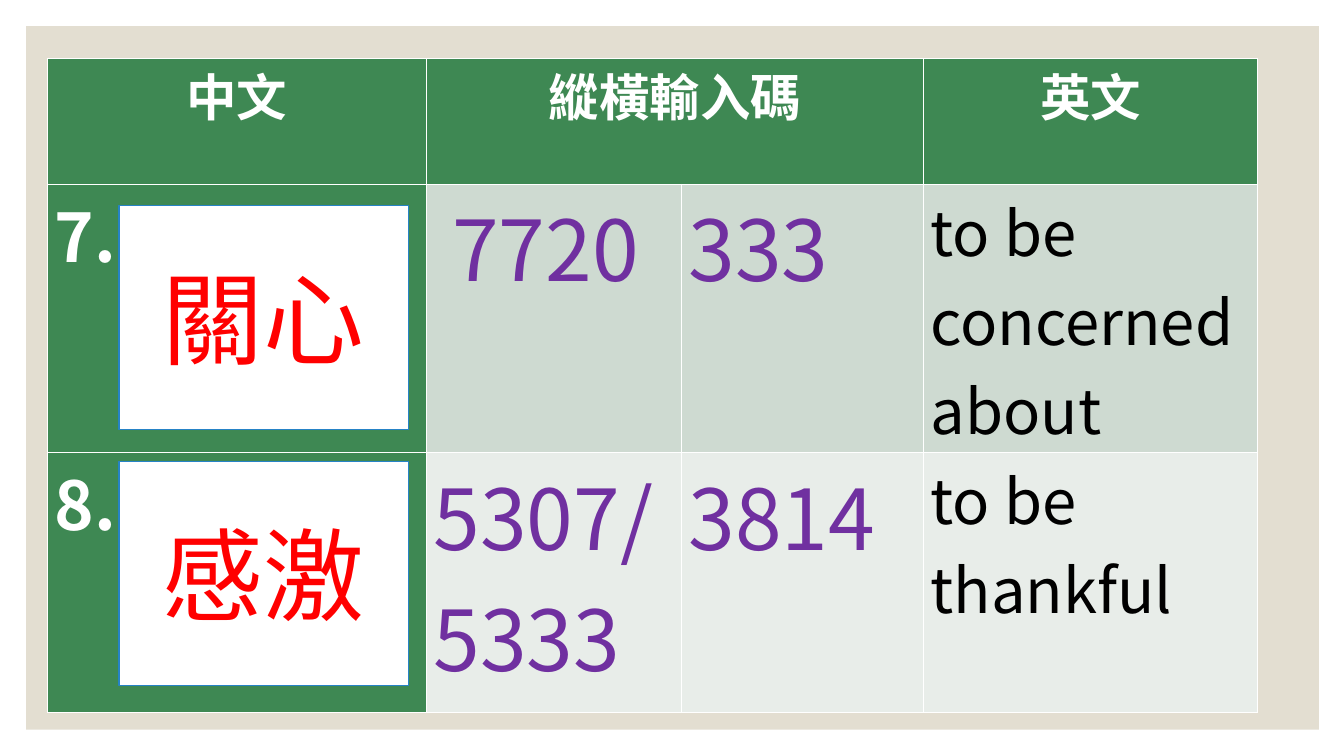
from lxml.etree import SubElement
from pptx import Presentation
from pptx.dml.color import RGBColor
from pptx.enum.shapes import MSO_SHAPE as SHAPE
from pptx.enum.text import MSO_ANCHOR as ANCHOR, PP_ALIGN as ALIGN
from pptx.oxml.ns import qn
from pptx.util import Pt

FONT = "Noto Sans CJK SC"
WHITE = RGBColor(0xFF, 0xFF, 0xFF)
BLACK = RGBColor(0, 0, 0)
RED = RGBColor(0xFF, 0, 0)
PURPLE = RGBColor(0x70, 0x30, 0xA0)
GREEN = RGBColor(0x3E, 0x88, 0x53)
SAGE = RGBColor(0xCE, 0xDA, 0xD1)
MIST = RGBColor(0xE8, 0xED, 0xE9)
BEIGE = RGBColor(0xE3, 0xDE, 0xD1)
BLUE = RGBColor(0x26, 0x83, 0xC6)

HEADERS = {0: "中文", 1: "縱橫輸入碼", 3: "英文"}
WORDS = [
    ("7.", " 7720", "333", "to be concerned about"),
    ("8.", "5307/5333", "3814", "to be thankful"),
]
ANSWERS = ["關心", "感激"]
BANDS = [SAGE, MIST]
COLUMN_STYLES = [(48, WHITE, True), (60, PURPLE, False),
                 (60, PURPLE, False), (44, BLACK, False)]

EMU_PER_PX = 9144
COL_WIDTHS = [376, 253, 240, 331]
ROW_HEIGHTS = [125, 258, 258]
TABLE_LEFT, TABLE_TOP = 47, 58
CARD_LEFT, CARD_TOP, CARD_WIDTH, CARD_HEIGHT, CARD_STEP = 118, 204, 287, 222, 254


def px(*lengths):
    return [n * EMU_PER_PX for n in lengths]


def add_text(tf, text, size, color, bold=False, align=ALIGN.LEFT):
    p = tf.paragraphs[0]
    p.alignment = align
    r = p.add_run()
    r.text = text
    r.font.size = Pt(size)
    r.font.bold = bold
    r.font.color.rgb = color
    r.font.name = FONT
    SubElement(r.font._element, qn("a:ea"), typeface=FONT)


def add_box(shapes, box, fill, line=None):
    sp = shapes.add_shape(SHAPE.RECTANGLE, *px(*box))
    sp.shadow.inherit = False
    sp.fill.solid()
    sp.fill.fore_color.rgb = fill
    if line is None:
        sp.line.fill.background()
    else:
        sp.line.color.rgb = line
        sp.line.width = Pt(1)
    return sp


def add_word_table(shapes):
    box = px(TABLE_LEFT, TABLE_TOP, sum(COL_WIDTHS), sum(ROW_HEIGHTS))
    table = shapes.add_table(len(ROW_HEIGHTS), len(COL_WIDTHS), *box).table
    table.first_col = True
    for col, width in zip(table.columns, px(*COL_WIDTHS)):
        col.width = width
    for row, height in zip(table.rows, px(*ROW_HEIGHTS)):
        row.height = height
    for i, row in enumerate(table.rows):
        for j, cell in enumerate(row.cells):
            cell.margin_left, cell.margin_right = px(7, 7)
            cell.margin_top = cell.margin_bottom = 0
            cell.fill.solid()
            cell.fill.fore_color.rgb = GREEN if i == 0 or j == 0 else BANDS[i - 1]
    table.cell(0, 1).merge(table.cell(0, 2))
    for j, text in HEADERS.items():
        add_text(table.cell(0, j).text_frame, text, 36, WHITE, True, ALIGN.CENTER)
    for i, word in enumerate(WORDS, 1):
        for j, (text, style) in enumerate(zip(word, COLUMN_STYLES)):
            add_text(table.cell(i, j).text_frame, text, *style)


def main():
    prs = Presentation()
    prs.slide_width, prs.slide_height = px(1333, 750)
    s = prs.slides.add_slide(prs.slide_layouts[6])
    add_box(s.shapes, (26, 26, 1282, 698), BEIGE)
    add_word_table(s.shapes)
    for i, answer in enumerate(ANSWERS):
        box = (CARD_LEFT, CARD_TOP + i * CARD_STEP, CARD_WIDTH, CARD_HEIGHT)
        sp = add_box(s.shapes, box, WHITE, BLUE)
        sp.text_frame.word_wrap = True
        sp.text_frame.vertical_anchor = ANCHOR.MIDDLE
        add_text(sp.text_frame, answer, 72, RED, align=ALIGN.CENTER)
    prs.save("out.pptx")


if __name__ == "__main__":
    main()
